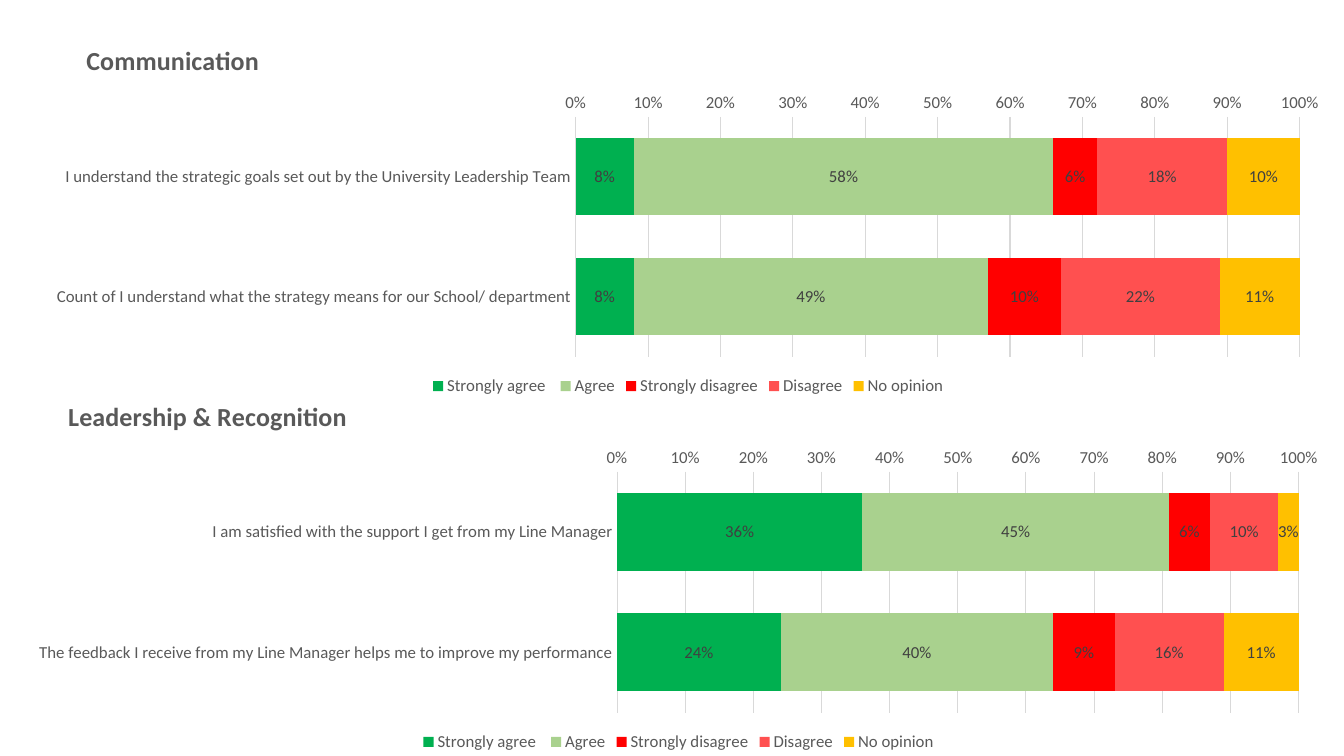
"""Build a slide with two stacked bar charts of staff survey answers."""
from lxml import etree
from pptx import Presentation
from pptx.chart.data import CategoryChartData
from pptx.dml.color import RGBColor
from pptx.enum.chart import XL_CHART_TYPE as ChartType
from pptx.enum.chart import XL_LABEL_POSITION as LabelPos
from pptx.enum.chart import XL_LEGEND_POSITION as LegendPos
from pptx.enum.chart import XL_TICK_MARK as Tick
from pptx.oxml import parse_xml
from pptx.oxml.ns import nsdecls
from pptx.util import Inches, Pt

ANSWERS = [
    ("Strongly agree ", "00B050"),
    ("Agree", "A9D18E"),
    ("Strongly disagree", "FF0000"),
    ("Disagree", "FF5050"),
    ("No opinion", "FFC000"),
]
CHARTS = [
    {
        "title": "Communication",
        "box": (0.31, 0.24, 13.03, 3.73),
        "plot": (5.4, 0.92, 7.18, 2.38),
        "rows": {
            "I understand the strategic goals set out by the University Leadership Team":
                (0.08, 0.58, 0.06, 0.18, 0.10),
            "Count of I understand what the strategy means for our School/ department":
                (0.08, 0.49, 0.10, 0.22, 0.11),
        },
    },
    {
        "title": "Leadership & Recognition",
        "box": (0.13, 3.77, 13.2, 3.73),
        "plot": (5.99, 0.91, 6.76, 2.39),
        "rows": {
            "I am satisfied with the support I get from my Line Manager":
                (0.36, 0.45, 0.06, 0.10, 0.03),
            "The feedback I receive from my Line Manager helps me to improve my performance":
                (0.24, 0.40, 0.09, 0.16, 0.11),
        },
    },
]
TITLE_AT = (0.5, 0.13)
THEME = {
    "font": "Calibri", "text": "595959", "label": "404040", "line": "D9D9D9",
    "title_size": 18.6, "text_size": 12, "line_width": 0.75, "percent": "0%",
}


def set_font(font, size=THEME["text_size"], color=THEME["text"], bold=False):
    font.name, font.size, font.bold = THEME["font"], Pt(size), bold
    font.color.rgb = RGBColor.from_string(color)


def set_line(line):
    line.color.rgb = RGBColor.from_string(THEME["line"])
    line.width = Pt(THEME["line_width"])


def layout(box, x, y, w=None, h=None):
    """Return a manual layout, with inches in the chart box turned into fractions."""
    root = parse_xml(f"<c:layout {nsdecls('c')}><c:manualLayout/></c:layout>")
    items = [("xMode", "edge"), ("yMode", "edge"), ("x", x / box[2]), ("y", y / box[3])]
    if w:
        items.insert(0, ("layoutTarget", "inner"))
        items += [("w", w / box[2]), ("h", h / box[3])]
    for name, value in items:
        tag = "{%s}%s" % (root.nsmap["c"], name)
        etree.SubElement(root[0], tag).set("val", str(value))
    return root


def place(parent, new, index):
    for old in parent.findall(new.tag):
        parent.remove(old)
    parent.insert(index, new)


def add_survey_chart(slide, item):
    box = item["box"]
    data = CategoryChartData(number_format=THEME["percent"])
    data.categories = list(item["rows"])
    for (name, _), values in zip(ANSWERS, zip(*item["rows"].values())):
        data.add_series(name, values)
    chart = slide.shapes.add_chart(
        ChartType.BAR_STACKED_100, *map(Inches, box), data).chart
    set_font(chart.font)

    chart.has_title = True
    tf = chart.chart_title.text_frame
    tf.text = item["title"]
    set_font(tf.paragraphs[0].runs[0].font, THEME["title_size"], bold=True)
    chart.chart_title.include_in_layout = False
    place(chart.chart_title._element, layout(box, *TITLE_AT), 1)

    chart.has_legend = True
    chart.legend.position = LegendPos.BOTTOM
    chart.legend.include_in_layout = False
    set_font(chart.legend.font)

    for axis in (chart.category_axis, chart.value_axis):
        axis.major_tick_mark = axis.minor_tick_mark = Tick.NONE
        set_font(axis.tick_labels.font)
    chart.category_axis.reverse_order = True
    set_line(chart.category_axis.format.line)
    axis = chart.value_axis
    axis.minimum_scale, axis.maximum_scale, axis.major_unit = 0, 1, 0.1
    axis.has_major_gridlines = True
    set_line(axis.major_gridlines.format.line)
    axis.format.line.fill.background()
    axis.tick_labels.number_format = THEME["percent"]
    axis.tick_labels.number_format_is_linked = False

    plot = chart.plots[0]
    plot.gap_width, plot.overlap, plot.vary_by_categories = 55, 100, False
    for series, (_, color) in zip(plot.series, ANSWERS):
        series.format.fill.solid()
        series.format.fill.fore_color.rgb = RGBColor.from_string(color)
        labels = series.data_labels
        labels.show_value = True
        labels.position = LabelPos.CENTER
        labels.number_format = THEME["percent"]
        labels.number_format_is_linked = False
        set_font(labels.font, color=THEME["label"])
    place(plot._element.getparent(), layout(box, *item["plot"]), 0)


def main():
    prs = Presentation()
    prs.slide_width, prs.slide_height = Inches(13.33), Inches(7.5)
    slide = prs.slides.add_slide(prs.slide_layouts[6])
    for item in CHARTS:
        add_survey_chart(slide, item)
    prs.save("out.pptx")


if __name__ == "__main__":
    main()
